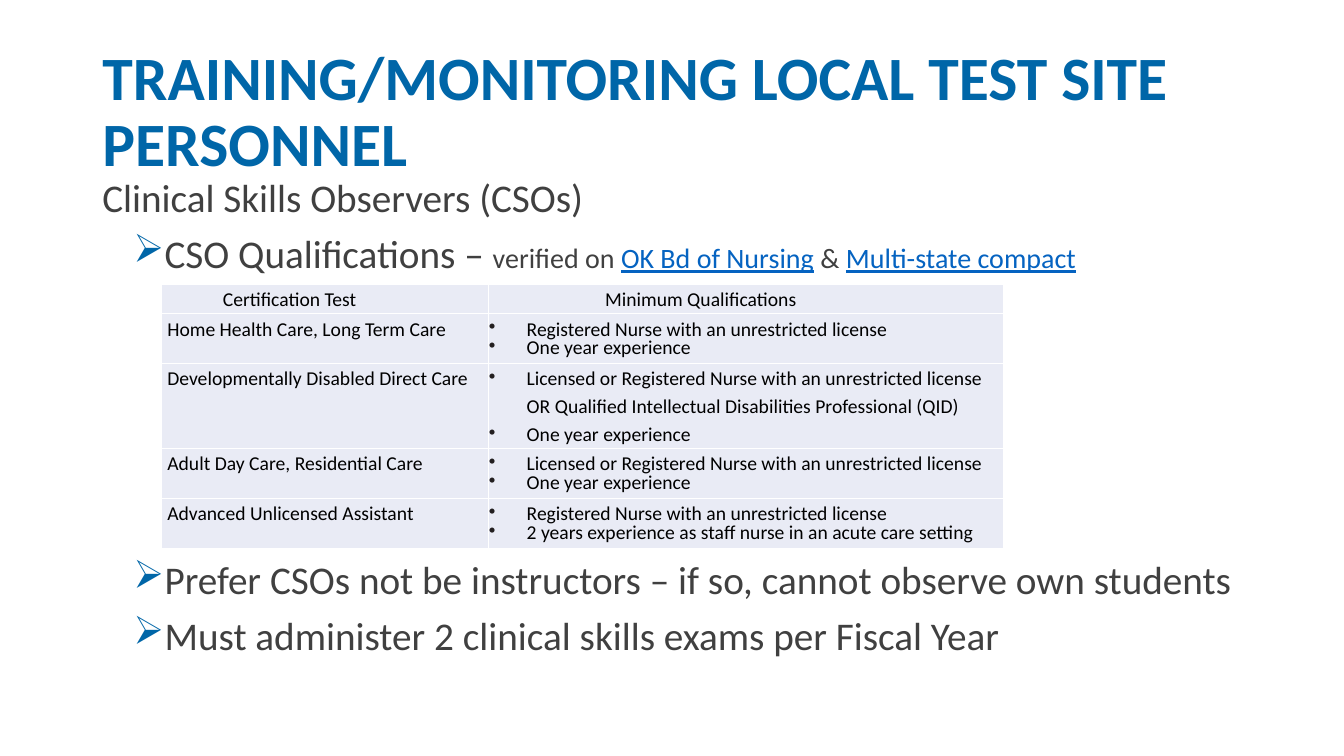
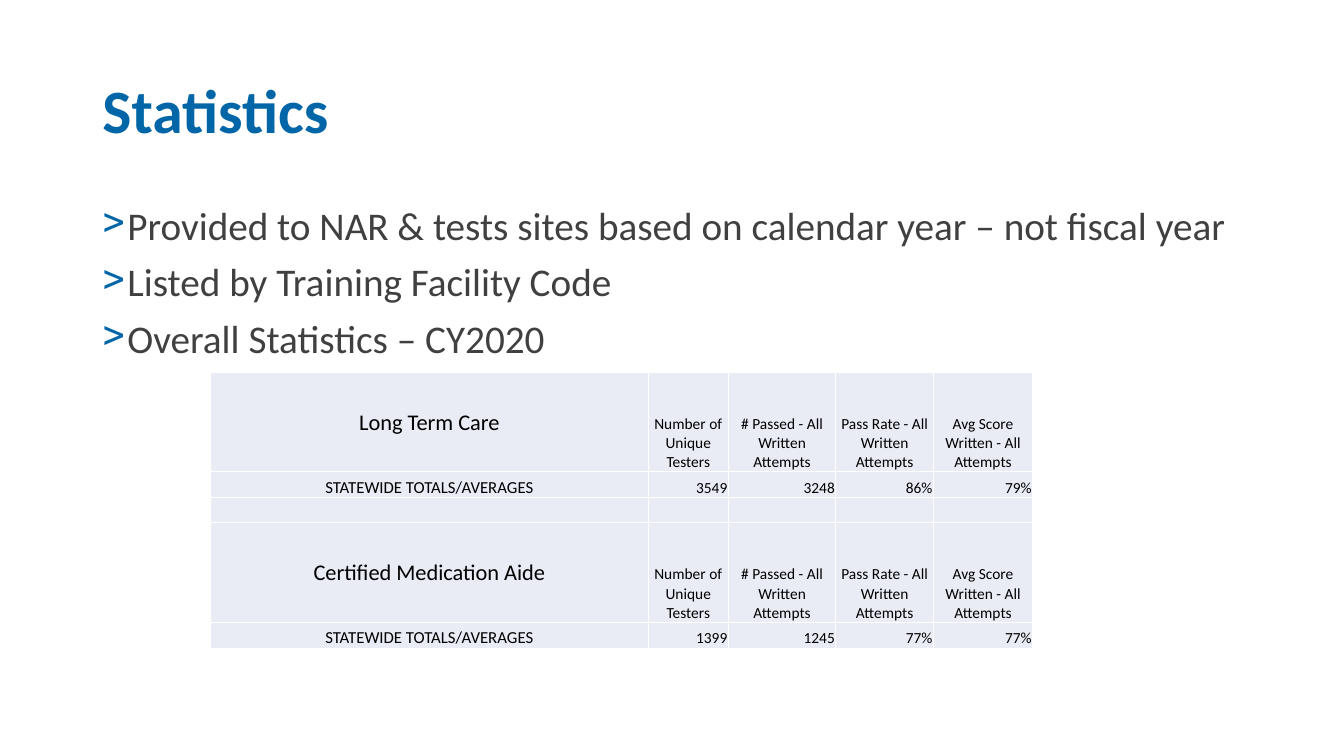
"""Build two slides on test site personnel and test statistics."""
from lxml.etree import SubElement
from pptx import Presentation
from pptx.dml.color import RGBColor
from pptx.enum.text import MSO_ANCHOR as Anchor, MSO_AUTO_SIZE as AutoSize, PP_ALIGN as Align
from pptx.oxml.ns import qn
from pptx.util import Pt

FONT = "Calibri"
COLORS = {
    "accent": "0066A8",
    "body": "404040",
    "link": "0563C1",
    "table": "000000",
    "dot": "231F20",
    "cell": "E9EBF5",
    "border": "FFFFFF",
}
BODY = {"size": 28, "color": "body", "layout": {"line_spacing": 0.9}, "before": 10}
TABLE = {"size": 14, "color": "table", "layout": {"line_spacing": 1.15}}
DOT = {**TABLE, "left": 27, "indent": -27, "bullet": ("•", "dot"), "before": 0.5}
FIGURES = {"size": 11, "color": "table", "anchor": Anchor.BOTTOM, "insets": (0.7, 0.7, 0.7, 0)}
CENTERED = {**FIGURES, "layout": {"alignment": Align.CENTER}}
STYLES = {
    "title": {"size": 44, "color": "accent", "font": {"bold": True},
              "layout": {"line_spacing": 0.9, "alignment": Align.LEFT}},
    "body": BODY,
    "arrow": {**BODY, "left": 18, "indent": 4.3, "bullet": ("➢", "accent")},
    "angle": {**BODY, "left": 18, "indent": -18, "bullet": (">", "accent")},
    "test head": {**TABLE, "left": 44},
    "minimum head": {**TABLE, "left": 83},
    "test": {**TABLE, "left": 4.3},
    "dot": DOT,
    "tight dot": {**DOT, "layout": {"line_spacing": Pt(12.7)}},
    "group": {**CENTERED, "size": 16, "anchor": Anchor.MIDDLE},
    "measure": CENTERED,
    "total": {**CENTERED, "size": 12},
    "figure": {**FIGURES, "layout": {"alignment": Align.RIGHT}},
}


def set_attributes(target, values):
    """Set every named attribute of the target."""
    for name, value in values.items():
        setattr(target, name, value)


def add_color(parent, color):
    """Append a solid colour element."""
    SubElement(parent, qn("a:srgbClr")).set("val", COLORS[color])


class Deck:
    """Hold the presentation and its current slide, and add styled elements."""

    def __init__(self):
        """Start an empty wide presentation."""
        self.presentation = Presentation()
        set_attributes(self.presentation, {"slide_width": Pt(960), "slide_height": Pt(540)})
        self.slide = None

    def add_slide(self, title):
        """Add a slide and format its title."""
        self.slide = self.presentation.slides.add_slide(self.presentation.slide_layouts[5])
        shape = self.slide.shapes.title
        set_attributes(shape, {"left": Pt(66), "top": Pt(28.8), "width": Pt(828), "height": Pt(104.4)})
        set_attributes(shape.text_frame, {"word_wrap": True, "auto_size": AutoSize.NONE,
                                          "vertical_anchor": Anchor.MIDDLE})
        self.fill_frame(shape.text_frame, [("title", title)])

    def add_text(self, top, height, paragraphs):
        """Add a body text box."""
        shape = self.slide.shapes.add_textbox(Pt(66), Pt(top), Pt(828), Pt(height))
        shape.text_frame.word_wrap = True
        self.fill_frame(shape.text_frame, paragraphs)

    def fill_frame(self, frame, paragraphs):
        """Put pairs of style name and content into a text frame."""
        for index, (name, content) in enumerate(paragraphs):
            style = STYLES[name]
            paragraph = frame.add_paragraph() if index else frame.paragraphs[0]
            properties = paragraph._p.get_or_add_pPr()
            properties.set("marL", str(Pt(style.get("left", 0))))
            properties.set("indent", str(Pt(style.get("indent", 0))))
            if "bullet" in style:
                character, color = style["bullet"]
                add_color(SubElement(properties, qn("a:buClr")), color)
                SubElement(properties, qn("a:buChar")).set("char", character)
            set_attributes(paragraph, style.get("layout", {}))
            paragraph.space_before = Pt(style.get("before", 0) if index else 0)
            if not content:
                paragraph._p.get_or_add_endParaRPr().set("sz", str(style["size"] * 100))
                continue
            runs = [(content, {})] if isinstance(content, str) else content
            for text, changes in runs:
                self.add_run(paragraph, text, {**style, **changes})

    def add_run(self, paragraph, text, style):
        """Add one formatted run."""
        run = paragraph.add_run()
        run.text = text
        set_attributes(run.font, {"name": FONT, "size": Pt(style["size"]), **style.get("font", {})})
        run.font.color.rgb = RGBColor.from_string(COLORS[style["color"]])

    def add_table(self, left, top, widths, heights, rows):
        """Add a table whose cells are lists of styled paragraphs."""
        frame = self.slide.shapes.add_table(len(heights), len(widths), Pt(left), Pt(top),
                                            Pt(sum(widths)), Pt(sum(heights)))
        table = frame.table
        set_attributes(table, {"first_row": False, "horz_banding": False})
        for column, width in zip(table.columns, widths):
            column.width = Pt(width)
        for row, height, contents in zip(table.rows, heights, rows):
            row.height = Pt(height)
            for cell, paragraphs in zip(row.cells, contents):
                self.format_cell(cell, STYLES[paragraphs[0][0]])
                self.fill_frame(cell.text_frame, paragraphs)

    def format_cell(self, cell, style):
        """Set the insets, anchor, borders and fill of a cell."""
        sides = ("margin_left", "margin_top", "margin_right", "margin_bottom")
        insets = style.get("insets", (0, 0, 0, 0))
        set_attributes(cell, {side: Pt(inset) for side, inset in zip(sides, insets)})
        cell.vertical_anchor = style.get("anchor", Anchor.TOP)
        properties = cell._tc.get_or_add_tcPr()
        for edge in ("lnL", "lnR", "lnT", "lnB"):
            line = SubElement(properties, qn(f"a:{edge}"), w=str(Pt(1)))
            add_color(SubElement(line, qn("a:solidFill")), "border")
        cell.fill.solid()
        cell.fill.fore_color.rgb = RGBColor.from_string(COLORS["cell"])


def add_personnel(deck):
    """Add the slide on clinical skills observers."""
    small, link = {"size": 20}, {"size": 20, "color": "link", "font": {"underline": True}}
    deck.add_slide("TRAINING/MONITORING LOCAL TEST SITE PERSONNEL")
    deck.add_text(123.8, 78, [
        ("body", "Clinical Skills Observers (CSOs)"),
        ("arrow", [("CSO Qualifications – ", {}), ("verified on ", small),
                   ("OK Bd of Nursing", link), (" & ", small), ("Multi-state compact", link)]),
    ])
    registered = "Registered Nurse with an unrestricted license"
    licensed = f"Licensed or {registered}"
    disabilities = f"{licensed} OR Qualified Intellectual Disabilities Professional (QID)"
    year = "One year experience"
    qualifications = [
        ("Home Health Care, Long Term Care", registered, "tight dot", year),
        ("Developmentally Disabled Direct Care", disabilities, "dot", year),
        ("Adult Day Care, Residential Care", licensed, "tight dot", year),
        ("Advanced Unlicensed Assistant", registered, "tight dot",
         "2 years experience as staff nurse in an acute care setting"),
    ]
    rows = [[[("test head", "Certification Test")], [("minimum head", "Minimum Qualifications")]]]
    rows += [[[("test", test)], [("dot", license_text), (style, experience)]]
             for test, license_text, style, experience in qualifications]
    deck.add_table(115.2, 203, [234, 368], [21.2, 35.6, 60.7, 35.6, 35.6], rows)
    deck.add_text(396.7, 84, [
        ("arrow", "Prefer CSOs not be instructors – if so, cannot observe own students"),
        ("arrow", "Must administer 2 clinical skills exams per Fiscal Year"),
    ])


def add_statistics(deck):
    """Add the slide on test statistics."""
    deck.add_slide("Statistics")
    deck.add_text(144, 120, [("angle", text) for text in (
        "Provided to NAR & tests sites based on calendar year – not fiscal year",
        "Listed by Training Facility Code",
        "Overall Statistics – CY2020",
    )])
    measures = ["Number of Unique Testers", "# Passed - All Written Attempts",
                "Pass Rate - All Written Attempts", "Avg Score Written - All Attempts"]

    def group_rows(group, figures):
        """Return the heading row and totals row of a group."""
        return [
            [[("group", group)]] + [[("measure", measure)] for measure in measures],
            [[("total", "STATEWIDE TOTALS/AVERAGES")]] + [[("figure", figure)] for figure in figures],
        ]

    rows = group_rows("Long Term Care", ["3549", "3248", "86%", "79%"])
    rows.append([[("figure", "")]] * 5)
    rows += group_rows("Certified Medication Aide", ["1399", "1245", "77%", "77%"])
    deck.add_table(150.5, 266, [312.5, 57.3, 76.8, 69.7, 70.9], [71, 18.5, 18, 71, 18.5], rows)


def main():
    """Build and save the presentation."""
    deck = Deck()
    add_personnel(deck)
    add_statistics(deck)
    deck.presentation.save("out.pptx")


if __name__ == "__main__":
    main()
